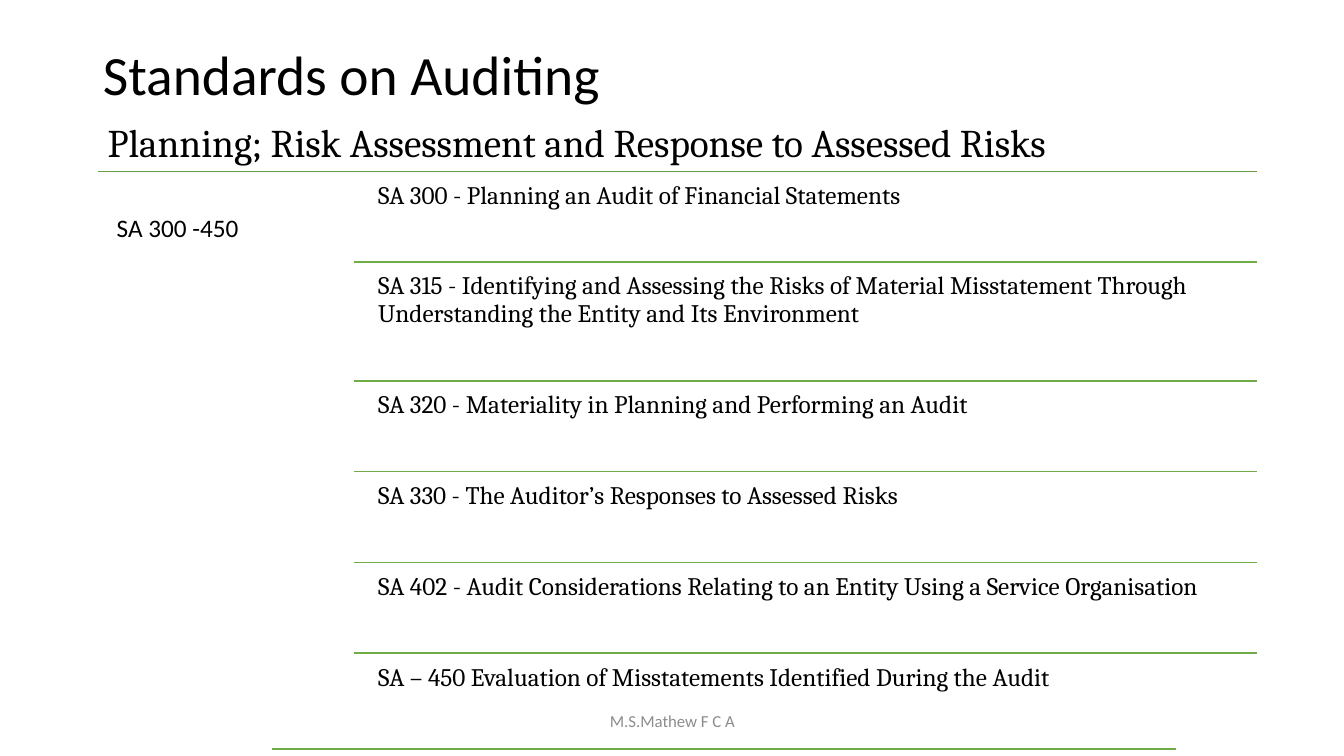
"""Build the Standards on Auditing slide: planning, risk assessment and response."""
from dataclasses import dataclass

from lxml import etree
from pptx import Presentation
from pptx import util as u
from pptx.dml.color import RGBColor
from pptx.enum import shapes, text
from pptx.oxml.ns import qn


@dataclass(frozen=True)
class Theme:
    head: str = "Calibri"
    body: str = "Cambria"
    ink: str = "000000"
    muted: str = "8C8C8C"
    rule: str = "70AD47"
    top_rule: str = "669D40"
    title: float = 39.6
    subtitle: float = 28
    item: float = 18
    footer: float = 12


T = Theme()
LEFT, RIGHT = 0.97, 12.47
RULE_LEFT, ITEM_LEFT = 3.51, 3.68
TOP, ROW, TALL_ROW, GAP = 1.74, 0.9, 1.18, 0.04
ITEMS = [
    ("SA 300 - Planning an Audit of Financial Statements", ROW),
    ("SA 315 - Identifying and Assessing the Risks of Material Misstatement Through "
     "Understanding the Entity and Its Environment", TALL_ROW),
    ("SA 320 - Materiality in Planning and Performing an Audit", ROW),
    ("SA 330 - The Auditor’s Responses to Assessed Risks", ROW),
    ("SA 402 - Audit Considerations Relating to an Entity Using a Service Organisation", ROW),
    ("SA – 450 Evaluation of Misstatements Identified During the Audit", ROW),
]

prs = Presentation()
prs.slide_width, prs.slide_height = u.Inches(13.33), u.Inches(7.5)
s = prs.slides.add_slide(prs.slide_layouts[5])


def write(words, box, size, font=T.head, color=T.ink, sp=None, inset=None,
          align=text.PP_ALIGN.LEFT, anchor=text.MSO_ANCHOR.TOP, spacing=None):
    """Put formatted words in a box given in inches."""
    box = [u.Inches(v) for v in box]
    sp = sp or s.shapes.add_textbox(*box)
    sp.left, sp.top, sp.width, sp.height = box
    tf = sp.text_frame
    tf.word_wrap, tf.auto_size, tf.vertical_anchor = True, text.MSO_AUTO_SIZE.NONE, anchor
    if inset is not None:
        tf.margin_left = tf.margin_right = tf.margin_top = tf.margin_bottom = u.Inches(inset)
    p = tf.paragraphs[0]
    p.alignment, p.line_spacing = align, spacing
    r = p.add_run()
    r.text = words
    r.font.name, r.font.size = font, u.Pt(size)
    r.font.color.rgb = RGBColor.from_string(color)


def rule(x1, x2, y, color=T.rule):
    """Draw a thin horizontal line."""
    ln = s.shapes.add_connector(shapes.MSO_CONNECTOR.STRAIGHT,
                                *(u.Inches(v) for v in (x1, y, x2, y)))
    ln.line.color.rgb, ln.line.width = RGBColor.from_string(color), u.Pt(1)
    etree.SubElement(ln._element.spPr, qn("a:effectLst"))


write("Standards on Auditing", (0.92, 0.4, 11.5, 0.73), T.title, sp=s.shapes.title,
      anchor=text.MSO_ANCHOR.MIDDLE, spacing=0.9)

rule(LEFT, RIGHT, TOP - GAP, T.top_rule)
y = TOP
for i, (words, height) in enumerate(ITEMS):
    if i:
        rule(RULE_LEFT, RIGHT, y - GAP)
    write(words, (ITEM_LEFT, y, RIGHT - ITEM_LEFT, height - GAP), T.item, T.body,
          inset=0.07, spacing=0.9)
    y += height
rule(2.7, 11.66, 7.43)

write("Planning; Risk Assessment and Response to Assessed Risks",
      (LEFT, 1.12, 11.11, 0.57), T.subtitle, T.body)
write("SA 300 -450", (1.06, 2.06, 1.77, 0.4), T.item)
write("M.S.Mathew F C A", (4.42, 6.95, 4.5, 0.4), T.footer, color=T.muted,
      align=text.PP_ALIGN.CENTER, anchor=text.MSO_ANCHOR.MIDDLE)

prs.save("out.pptx")
